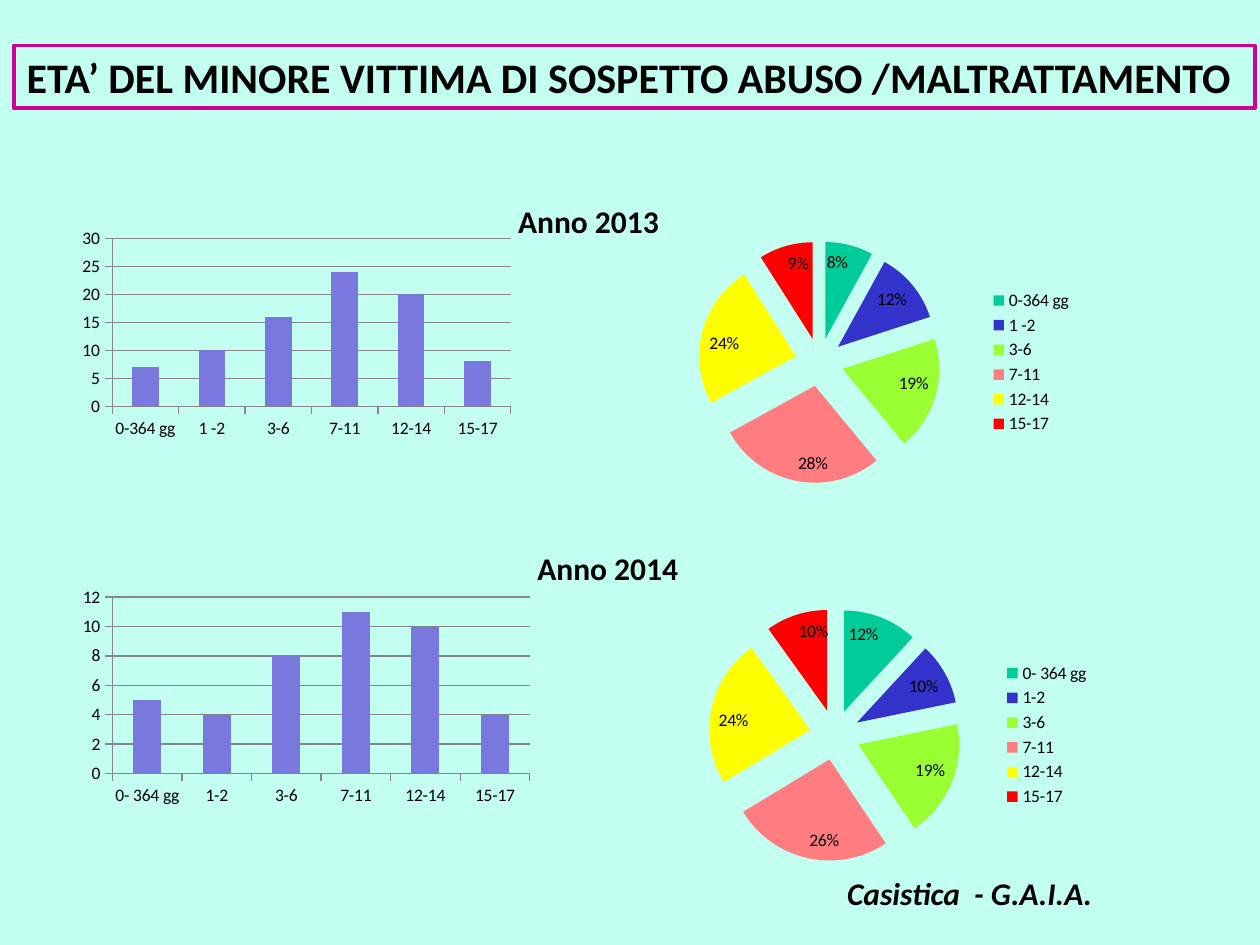
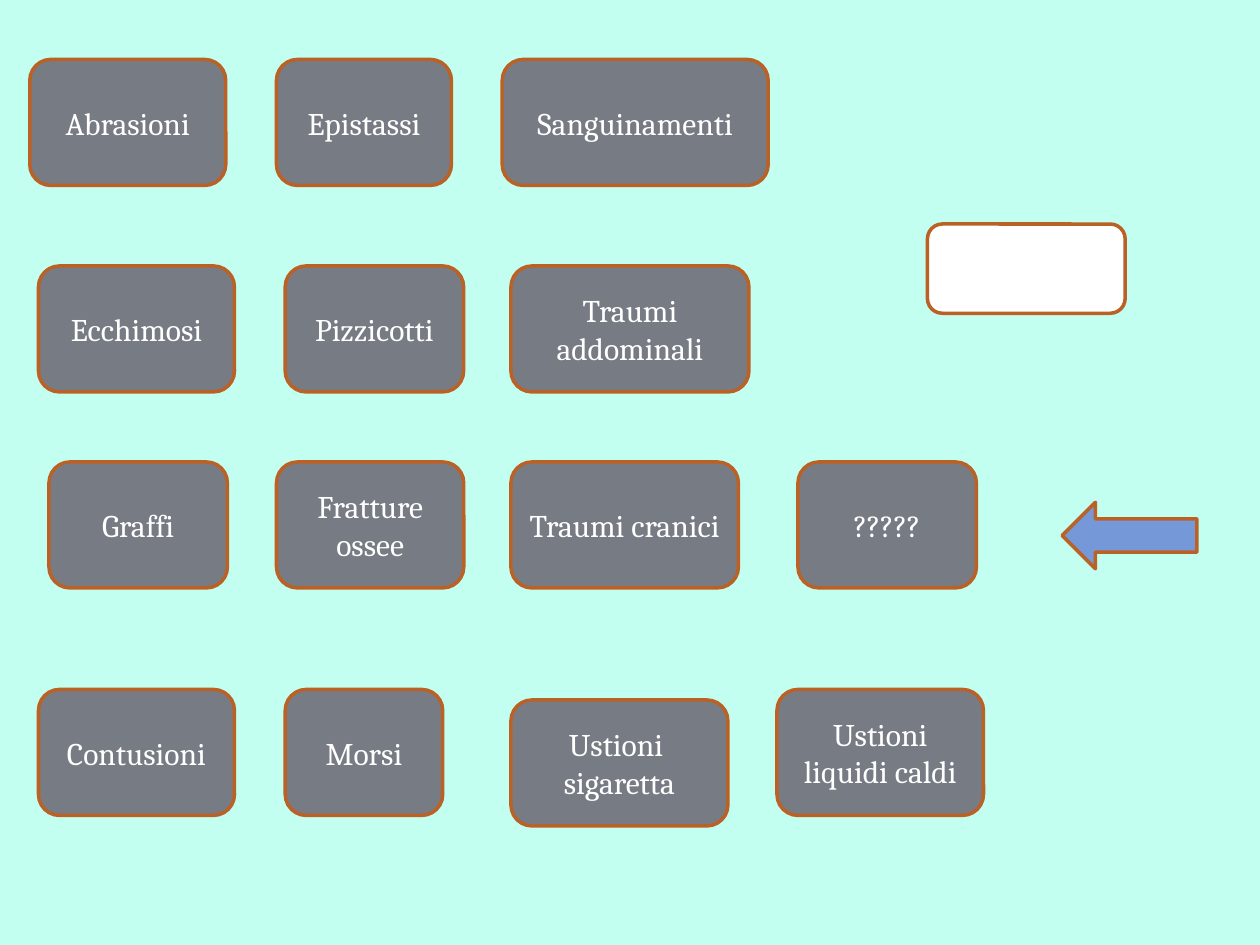
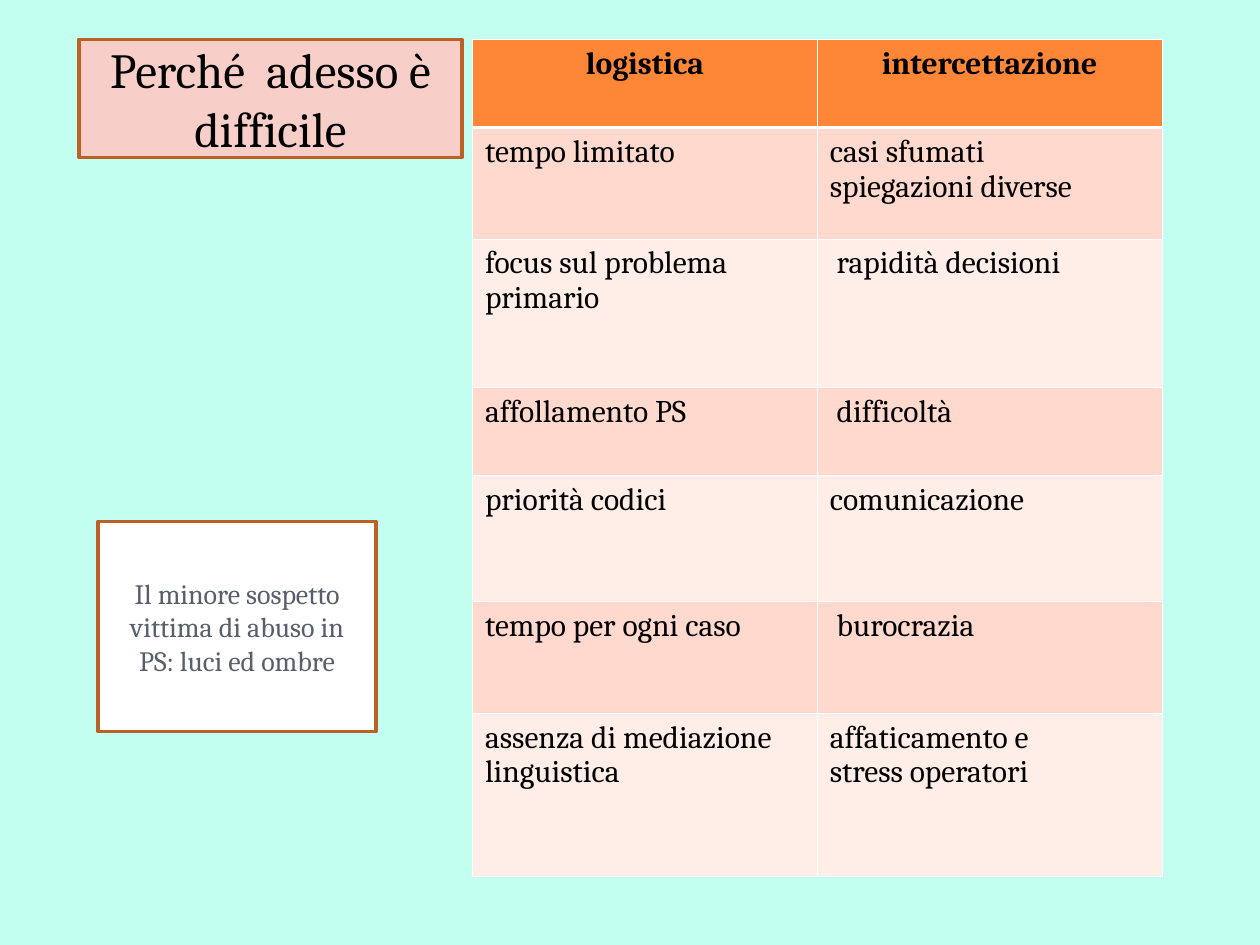
from lxml import etree
from pptx import Presentation
from pptx.chart.data import CategoryChartData
from pptx.dml.color import RGBColor
from pptx.enum.chart import XL_CHART_TYPE, XL_LABEL_POSITION, XL_LEGEND_POSITION, XL_TICK_MARK
from pptx.enum.shapes import MSO_SHAPE
from pptx.enum.text import MSO_ANCHOR, MSO_AUTO_SIZE, PP_ALIGN
from pptx.oxml.ns import qn
from pptx.util import Pt

COLUMN, PIE = XL_CHART_TYPE.COLUMN_CLUSTERED, XL_CHART_TYPE.PIE
INSIDE_END = XL_LABEL_POSITION.INSIDE_END
LEGEND_RIGHT = XL_LEGEND_POSITION.RIGHT
TICK_OUT = XL_TICK_MARK.OUTSIDE
RECT, ROUNDED, ARROW = MSO_SHAPE.RECTANGLE, MSO_SHAPE.ROUNDED_RECTANGLE, MSO_SHAPE.LEFT_ARROW
TOP, MIDDLE = MSO_ANCHOR.TOP, MSO_ANCHOR.MIDDLE
LEFT, CENTER, JUSTIFY = PP_ALIGN.LEFT, PP_ALIGN.CENTER, PP_ALIGN.JUSTIFY
NO_FIT = MSO_AUTO_SIZE.NONE
TITLE_ONLY, BLANK = 5, 6

SANS, SERIF = "Calibri", "Cambria"
MINT, BLACK, WHITE = "C2FFF0", "000000", "FFFFFF"
RUST, MAGENTA, SLATE, BLUE = "BB6126", "CC0099", "777C84", "7598D9"
PINK, INK, AXIS_GREY, BAR = "F8CFC8", "575F6D", "868686", "7878DE"
HEADER, BANDS = "FE8637", ("FFD9CE", "FFEDE8")
AGE_COLOURS = ("00CC99", "3333CC", "99FF33", "FF7C80", "FFFF00", "FF0000")


# Shared helpers
def rgb(value):
    return RGBColor.from_string(value)


def points(box):
    return [Pt(length) for length in box]


def paint(shape, fill=None, line=None, width=2):
    if fill:
        shape.fill.solid()
        shape.fill.fore_color.rgb = rgb(fill)
    else:
        shape.fill.background()
    if line:
        shape.line.color.rgb = rgb(line)
        shape.line.width = Pt(width)


def write(frame, text, font=SERIF, size=18, color=BLACK, bold=False, italic=False,
          align=LEFT, anchor=MIDDLE, wrap=True, spacing=None):
    frame.word_wrap = wrap
    frame.vertical_anchor = anchor
    frame.text = text
    for paragraph in frame.paragraphs:
        paragraph.alignment = align
        if spacing:
            paragraph.line_spacing = spacing
        for run in paragraph.runs:
            run.font.name = font
            run.font.size = Pt(size)
            run.font.bold = bold
            run.font.italic = italic
            run.font.color.rgb = rgb(color)


def add_panel(slide, kind, box, fill, text="", **text_format):
    panel = slide.shapes.add_shape(kind, *points(box))
    panel.shadow.inherit = False
    paint(panel, fill, RUST)
    if text:
        write(panel.text_frame, text, align=CENTER, **text_format)


def add_label(slide, box, text, **text_format):
    label = slide.shapes.add_textbox(*points(box))
    write(label.text_frame, text, font=SANS, bold=True, anchor=TOP, wrap=False, **text_format)


def place_title(slide, box, text, fill=None, line=RUST, width=2, **text_format):
    title = slide.shapes.title
    title.left, title.top, title.width, title.height = points(box)
    paint(title, fill, line, width)
    title.text_frame.auto_size = NO_FIT
    write(title.text_frame, text, **text_format)


# Charts by age group
def add_age_chart(slide, kind, box, ages, values):
    data = CategoryChartData()
    data.categories = ages
    data.add_series("Series 1", values)
    chart = slide.shapes.add_chart(kind, *points(box), data).chart
    chart.has_title = False
    chart.has_legend = False
    chart.font.name = SANS
    chart.font.size = Pt(10)
    chart.font.color.rgb = rgb(BLACK)
    return chart


def add_age_bars(slide, box, ages, counts, step):
    chart = add_age_chart(slide, COLUMN, box, ages, counts)
    plot = chart.plots[0]
    plot.vary_by_categories = False
    plot.gap_width = 150
    bars = plot.series[0].format.fill
    bars.solid()
    bars.fore_color.rgb = rgb(BAR)
    scale = chart.value_axis
    scale.minimum_scale, scale.maximum_scale, scale.major_unit = 0, 6 * step, step
    scale.has_major_gridlines = True
    for axis in (scale, chart.category_axis):
        axis.major_tick_mark = TICK_OUT
        axis.format.line.color.rgb = rgb(AXIS_GREY)
    scale.major_gridlines.format.line.color.rgb = rgb(AXIS_GREY)


def add_age_pie(slide, box, ages, shares):
    chart = add_age_chart(slide, PIE, box, ages, shares)
    chart.has_legend = True
    chart.legend.position = LEGEND_RIGHT
    chart.legend.include_in_layout = False
    plot = chart.plots[0]
    plot.vary_by_categories = True
    series = plot.series[0]
    for index, colour in enumerate(AGE_COLOURS):
        slice_fill = series.points[index].format.fill
        slice_fill.solid()
        slice_fill.fore_color.rgb = rgb(colour)
    explosion = etree.Element(qn("c:explosion"), val="25")
    series._element.find(qn("c:dPt")).addprevious(explosion)
    plot.has_data_labels = True
    labels = plot.data_labels
    labels.show_percentage = True
    labels.show_value = False
    labels.number_format, labels.number_format_is_linked = "0%", False
    labels.position = INSIDE_END


def add_year(slide, box, year, ages, counts, shares, step, bar_size, heading_rise, pie_drop=0):
    left, top, width, height = box
    pie_width = 248
    add_age_bars(slide, (left, top, *bar_size), ages, counts, step)
    add_age_pie(slide, (left + width - pie_width, top + pie_drop, pie_width, height - pie_drop),
                ages, shares)
    add_label(slide, (left + bar_size[0] - 8, top - heading_rise, 95, 29), f"Anno {year}")


def build_ages(prs):
    slide = prs.slides.add_slide(prs.slide_layouts[TITLE_ONLY])
    place_title(slide, (8, 26, 709, 36), "ETA’ DEL MINORE VITTIMA DI SOSPETTO ABUSO /MALTRATTAMENTO",
                line=MAGENTA, width=2.25, font=SANS, size=24, bold=True, wrap=False)
    add_year(slide, (42, 128, 578, 158), 2013, ["0-364 gg", "1 -2", "3-6", "7-11", "12-14", "15-17"],
             (7, 10, 16, 24, 20, 8), (8, 12, 19, 28, 24, 9), 5, (255, 125), 16)
    add_year(slide, (42, 333, 588, 169), 2014, ["0- 364 gg", "1-2", "3-6", "7-11", "12-14", "15-17"],
             (5, 4, 8, 11, 10, 4), (12, 10, 19, 26, 24, 10), 2, (266, 130), 23, pie_drop=5)
    add_label(slide, (477, 496, 155, 29), "Casistica  - G.A.I.A.", italic=True, align=JUSTIFY)


# Injuries: one row of boxes per entry, as (left, width, text, drop)
INJURY_ROWS = {
    34: [(17, 112, "Abrasioni", 0), (158, 100, "Epistassi", 0), (287, 152, "Sanguinamenti", 0)],
    152: [(22, 112, "Ecchimosi", 0), (163, 102, "Pizzicotti", 0), (292, 136, "Traumi addominali", 0)],
    264: [(28, 102, "Graffi", 0), (158, 107, "Fratture ossee", 0), (292, 130, "Traumi cranici", 0),
          (456, 102, "?????", 0)],
    394: [(22, 112, "Contusioni", 0), (163, 90, "Morsi", 0), (292, 124, "Ustioni  sigaretta", 6),
          (444, 118, "Ustioni liquidi caldi", 0)],
}


def add_injury_row(slide, top, injuries, height=72):
    for left, width, injury, drop in injuries:
        add_panel(slide, ROUNDED, (left, top + drop, width, height), SLATE, injury, color=WHITE)


def build_injuries(prs):
    slide = prs.slides.add_slide(prs.slide_layouts[BLANK])
    for top, injuries in INJURY_ROWS.items():
        add_injury_row(slide, top, injuries)
    add_panel(slide, ROUNDED, (530, 128, 113, 51), WHITE)
    add_panel(slide, ARROW, (607, 287, 77, 38), BLUE)


# Difficulties table: row height and the two cells
DIFFICULTIES = [
    (50.4, "logistica", "intercettazione"),
    (63.6, "tempo limitato", "casi sfumati\nspiegazioni diverse"),
    (85, "focus sul problema primario", " rapidità decisioni"),
    (50.4, "affollamento PS", " difficoltà"),
    (72, "priorità codici", "comunicazione"),
    (63.6, "tempo per ogni caso", " burocrazia"),
    (93.6, "assenza di mediazione linguistica", "affaticamento e\vstress operatori"),
]


def add_borders(cell, **widths):
    properties = cell._tc.get_or_add_tcPr()
    for side, width in widths.items():
        line = etree.SubElement(properties, qn(f"a:ln{side}"), w=str(Pt(width)))
        fill = etree.SubElement(line, qn("a:solidFill"))
        etree.SubElement(fill, qn("a:srgbClr"), val=WHITE)


def add_difficulties(slide, box):
    table = slide.shapes.add_table(len(DIFFICULTIES), 2, *points(box)).table
    for column in table.columns:
        column.width = Pt(box[2] / 2)
    for index, (height, *texts) in enumerate(DIFFICULTIES):
        table.rows[index].height = Pt(height)
        is_header = index == 0
        for column, text in enumerate(texts):
            cell = table.cell(index, column)
            add_borders(cell, L=0.45, R=0.45, T=1.47 if index == 1 else 0.45,
                        B=1.47 if is_header else 0.45)
            cell.fill.solid()
            cell.fill.fore_color.rgb = rgb(HEADER if is_header else BANDS[(index - 1) % 2])
            cell.margin_top = Pt(4.3)
            write(cell.text_frame, text, bold=is_header, align=CENTER if is_header else LEFT,
                  anchor=TOP, spacing=0.95)
            cell.vertical_anchor = TOP


def build_difficulties(prs):
    slide = prs.slides.add_slide(prs.slide_layouts[TITLE_ONLY])
    add_difficulties(slide, (270, 22.5, 394, 478.6))
    place_title(slide, (45, 22.5, 219, 67.5), "Perché  adesso è difficile", fill=PINK,
                size=28, align=CENTER)
    add_panel(slide, RECT, (56, 298, 159, 120), WHITE,
              "Il minore sospetto vittima di abuso in PS: luci ed ombre", size=16, color=INK)


def main():
    prs = Presentation()
    prs.slide_width, prs.slide_height = Pt(720), Pt(540)
    background = prs.slide_master.background.fill
    background.solid()
    background.fore_color.rgb = rgb(MINT)
    build_ages(prs)
    build_injuries(prs)
    build_difficulties(prs)
    prs.save("out.pptx")


if __name__ == "__main__":
    main()
